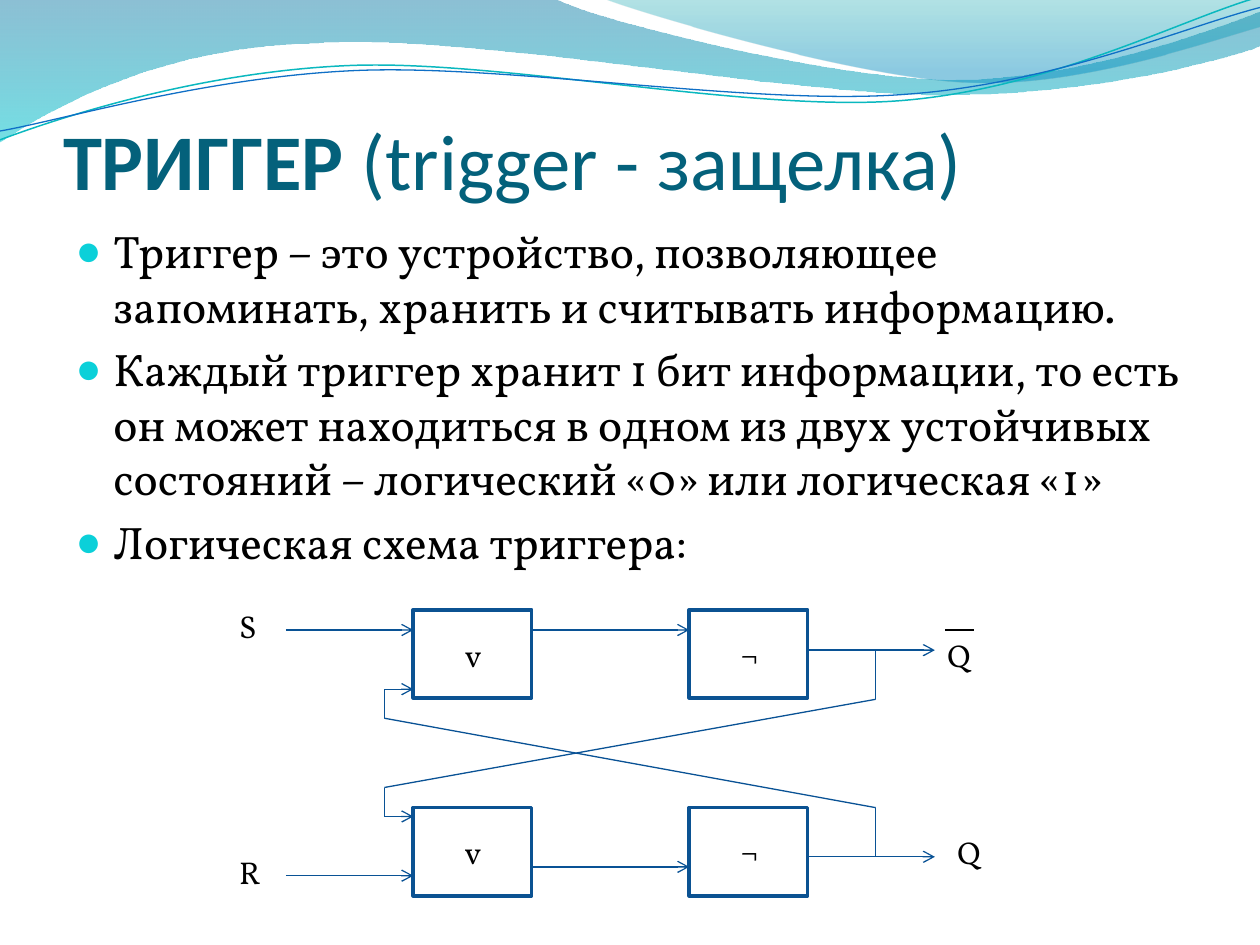
"""Build a slide on the trigger latch and its logic diagram."""
import math
import pptx
import pptx.util
import pptx.dml.color
import pptx.enum.shapes
import pptx.enum.text
import pptx.oxml.ns
import lxml.etree

Inches = pptx.util.Inches
Pt = pptx.util.Pt
qn = pptx.oxml.ns.qn
TEXT = "Vollkorn"
BLUE = "095295"
TILT = 2.7


def color(code):
    return pptx.dml.color.RGBColor.from_string(code)


def child(node, tag, **attrs):
    return lxml.etree.SubElement(node, qn(tag), attrs)


def pairs(part):
    return list(zip(part[::2], part[1::2]))


def turn(part, mid):
    cos, sin = math.cos(math.radians(TILT)), math.sin(math.radians(TILT))
    spots = [(x - mid[0], y - mid[1]) for x, y in pairs(part)]
    return [value for x, y in spots for value in
            (mid[0] + x * cos - y * sin, mid[1] + x * sin + y * cos)]


class Deck:
    def __init__(self):
        self.file = pptx.Presentation()
        self.file.slide_width = Inches(10)
        self.file.slide_height = Inches(7.5)
        self.slide = self.file.slides.add_slide(self.file.slide_layouts[1])
        self.shapes = self.slide.shapes

    def group(self):
        self.shapes = self.slide.shapes.add_group_shape().shapes

    def run(self, para, text, size, font=TEXT, code="000000", bold=False):
        run = para.add_run()
        run.text = text
        run.font.size = Pt(size)
        run.font.name = font
        run.font.bold = bold
        run.font.color.rgb = color(code)

    def stroke(self, shape, code, width):
        shape.line.color.rgb = color(code)
        shape.line.width = Pt(width)

    def curve(self, start, parts, close=False):
        spots = [spot for part in parts for spot in pairs(part)]
        pen = self.shapes.build_freeform(*map(Inches, start))
        pen.add_line_segments([(Inches(x), Inches(y)) for x, y in spots], close)
        shape = pen.convert_to_shape()
        shape.shadow.inherit = False
        legs = iter(list(shape._element.spPr.iter(qn("a:lnTo"))))
        for part in parts:
            first = next(legs)
            if len(part) == 6:
                bend = lxml.etree.Element(qn("a:cubicBezTo"))
                first.addprevious(bend)
                for leg in (first, next(legs), next(legs)):
                    bend.append(leg[0])
                    leg.getparent().remove(leg)
        return shape

    def wave(self, start, parts, stops):
        shape = self.curve(start, parts, True)
        shape.line.fill.background()
        fill = shape.fill
        fill.gradient()
        fill.gradient_angle = 270
        for stop, (place, code, alpha) in zip(fill.gradient_stops, stops):
            stop.position = place
            stop.color.rgb = color(code)
        tags = shape._element.spPr.iter(qn("a:srgbClr"))
        for tag, (place, code, alpha) in zip(tags, stops):
            child(tag, "a:alpha", val=str(alpha * 1000))

    def strand(self, mid, start, parts, code, width):
        shape = self.curve(turn(start, mid), [turn(p, mid) for p in parts])
        shape.rotation = 360 - TILT
        shape.fill.background()
        self.stroke(shape, code, width)

    def holder(self, index, box):
        shape = self.slide.placeholders[index]
        self.slide.shapes._spTree.append(shape._element)
        shape.left, shape.top, shape.width, shape.height = map(Inches, box)
        shape.text_frame.auto_size = pptx.enum.text.MSO_AUTO_SIZE.NONE
        return shape.text_frame

    def title(self, box, parts):
        frame = self.holder(0, box)
        frame.vertical_anchor = pptx.enum.text.MSO_ANCHOR.BOTTOM
        frame.margin_left = frame.margin_right = frame.margin_bottom = 0
        para = frame.paragraphs[0]
        para.alignment = pptx.enum.text.PP_ALIGN.LEFT
        for text, bold in parts:
            self.run(para, text, 45, "Calibri", "04617B", bold)

    def bullets(self, box, items):
        frame = self.holder(1, box)
        for i, text in enumerate(items):
            para = frame.add_paragraph() if i else frame.paragraphs[0]
            para.space_before = Pt(5.2)
            props = para._p.get_or_add_pPr()
            props.set("marL", str(Inches(0.3)))
            props.set("indent", str(-Inches(0.3)))
            child(child(props, "a:buClr"), "a:srgbClr", val="0BD0D9")
            child(props, "a:buSzPct", val="95000")
            child(props, "a:buChar", char="●")
            self.run(para, text, 26)

    def gate(self, x, y):
        kind = pptx.enum.shapes.MSO_SHAPE.RECTANGLE
        shape = self.shapes.add_shape(kind, *map(Inches, (x, y, 0.94, 0.7)))
        shape.shadow.inherit = False
        shape.fill.background()
        self.stroke(shape, "0B5292", 2)

    def wire(self, x1, y1, x2, y2, arrow=False, code=BLUE):
        kind = pptx.enum.shapes.MSO_CONNECTOR.STRAIGHT
        line = self.shapes.add_connector(kind, *map(Inches, (x1, y1, x2, y2)))
        self.stroke(line, code, 0.75)
        if arrow:
            child(line.line._get_or_add_ln(), "a:tailEnd", type="arrow")
        child(line._element.spPr, "a:effectLst")

    def label(self, text, x, y, width):
        shape = self.shapes.add_textbox(*map(Inches, (x, y, width, 0.4)))
        frame = shape.text_frame
        frame.word_wrap = True
        frame.auto_size = pptx.enum.text.MSO_AUTO_SIZE.SHAPE_TO_FIT_TEXT
        self.run(frame.paragraphs[0], text, 18)


def main():
    deck = Deck()
    deck.wave((0, 0), [
        (4.4, -0.01), (4.76, 0.17, 6.64, 0.63, 7.58, 0.63),
        (8.53, 0.63, 9.58, 0.26, 10, 0.09), (10.01, 0.36),
        (9.83, 0.44, 8.7, 0.76, 7.46, 0.75),
        (6.22, 0.75, 3.82, 0.28, 2.57, 0.34),
        (1.29, 0.36, 0.46, 0.83, -0.01, 1.13),
    ], [(0, "0074A1", 45), (1, "00C6CF", 55)])
    deck.wave((4.79, -0.01), [
        (5.09, 0.11, 6.82, 0.62, 7.69, 0.65),
        (8.56, 0.69, 9.61, 0.32, 10, 0.21), (10, 0),
    ], [(0, "00A1A9", 30), (0.8, "008BBF", 45)])
    deck.group()
    deck.strand((4.99, 0.58), (0, 1.11), [
        (0.48, 0.93, 1.58, 0.57, 2.77, 0.52),
        (3.95, 0.47, 5.93, 0.89, 7.13, 0.8),
        (8.33, 0.71, 9.38, 0.15, 9.98, -0.02),
    ], "0AB8BF", 0.85)
    deck.strand((5, 0.59), (0, 1.04), [
        (0.47, 0.96, 1.64, 0.61, 2.83, 0.56),
        (4.03, 0.51, 5.97, 0.84, 7.17, 0.75),
        (8.36, 0.67, 9.41, 0.21, 10, 0.06),
    ], "0F6FC6", 0.75)

    deck.title((0.5, 0.77, 9, 0.87),
               [("ТРИГГЕР ", True), ("(trigger - защелка)", False)])
    deck.bullets((0.5, 1.72, 9, 2.97), [
        "Триггер – это устройство, позволяющее запоминать, хранить и "
        "считывать информацию.",
        "Каждый триггер хранит 1 бит информации, то есть он может находиться "
        "в одном из двух устойчивых состояний – логический «0» или "
        "логическая «1»",
        "Логическая схема триггера:",
    ])

    deck.group()
    left, right, wide, back, tap = 3.28, 5.47, 0.94, 3.05, 6.95
    rows = [(4.84, 5, 5, 5.16, 5.47, 5.7, 5.55),
            (6.41, 6.95, 6.88, 6.8, 6.48, 6.25, 6.41)]
    for top, inlet, mid, out, feed, bend, drop in rows:
        deck.gate(left, top)
        deck.gate(right, top)
        deck.wire(2.27, inlet, left, inlet, True)
        deck.wire(left + wide, mid, right, mid, True)
        deck.wire(right + wide, out, 7.42, out, True)
        deck.wire(back, feed, left, feed, True)
        deck.wire(back, feed, back, bend)
        deck.wire(tap, drop, tap, out)
    deck.wire(back, 6.25, tap, 5.55)
    deck.wire(back, 5.7, tap, 6.41)
    for text, x, y, width in [
        ("S", 1.8, 4.77, 0.39), ("R", 1.8, 6.72, 0.47),
        ("v", 3.59, 5, 0.31), ("v", 3.59, 6.56, 0.23),
        ("¬", 5.78, 5, 0.31), ("¬", 5.78, 6.56, 0.39),
        ("Q", 7.42, 5, 0.47), ("Q", 7.5, 6.56, 0.39),
    ]:
        deck.label(text, x, y, width)
    deck.wire(7.5, 5, 7.73, 5, code="000000")
    deck.file.save("out.pptx")


if __name__ == "__main__":
    main()
